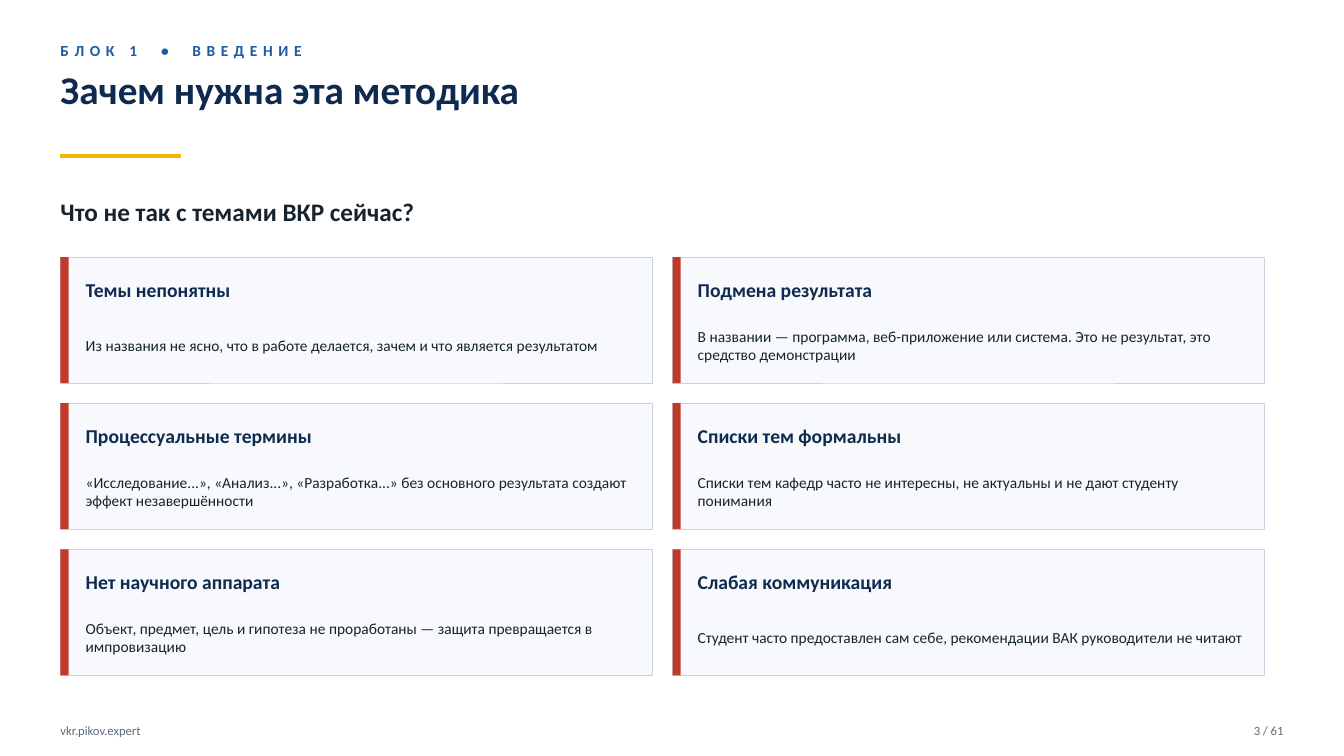
from dataclasses import dataclass

from pptx import Presentation
from pptx.dml.color import RGBColor
from pptx.enum.shapes import MSO_CONNECTOR as Connector, MSO_SHAPE as Preset
from pptx.enum.text import MSO_ANCHOR as Anchor, PP_ALIGN as Align
from pptx.oxml.ns import qn
from pptx.slide import Slide
from pptx.util import Pt
from lxml.etree import SubElement

EMU_PER_PX = 9144
FONT = "Calibri"
NAVY, INK, GRAY, BLUE = "0F2A4F", "16242F", "5C6B7A", "1E5AA7"
GOLD, RED, PANEL, BORDER = "F4B400", "C0392B", "F7F9FC", "C9D3E0"

MARGIN = 60
CARD_TOP, CARD_WIDTH, CARD_HEIGHT, GAP = 255, 587, 125, 20
COLUMNS = 2


@dataclass(frozen=True)
class Box:
    left: int
    top: int
    width: int
    height: int

    def emu(self) -> tuple[int, int, int, int]:
        return px(self.left), px(self.top), px(self.width), px(self.height)


@dataclass(frozen=True)
class Style:
    size: int
    color: str
    bold: bool = False
    anchor: Anchor = Anchor.MIDDLE
    align: Align = Align.LEFT


@dataclass(frozen=True)
class Card:
    heading: str
    body: str


EYEBROW = Style(11, BLUE, bold=True)
TITLE = Style(28, NAVY, bold=True, anchor=Anchor.TOP)
QUESTION = Style(18, INK, bold=True)
HEADING = Style(14, NAVY, bold=True)
BODY = Style(11, INK)
FOOTER = Style(9, GRAY)
PAGE_NUMBER = Style(9, GRAY, align=Align.RIGHT)

EYEBROW_RUNS = [("БЛОК 1", 400), (" ", 1050), ("•", 400), (" ", 1050), ("ВВЕДЕНИЕ", 400)]

CARDS = [
    Card("Темы непонятны",
         "Из названия не ясно, что в работе делается, зачем и что является результатом"),
    Card("Подмена результата",
         "В названии — программа, веб-приложение или система. "
         "Это не результат, это средство демонстрации"),
    Card("Процессуальные термины",
         "«Исследование...», «Анализ...», «Разработка...» "
         "без основного результата создают эффект незавершённости"),
    Card("Списки тем формальны",
         "Списки тем кафедр часто не интересны, не актуальны и не дают студенту понимания"),
    Card("Нет научного аппарата",
         "Объект, предмет, цель и гипотеза не проработаны — "
         "защита превращается в импровизацию"),
    Card("Слабая коммуникация",
         "Студент часто предоставлен сам себе, рекомендации ВАК руководители не читают"),
]


def px(value: int) -> int:
    return value * EMU_PER_PX


def rgb(color: str) -> RGBColor:
    return RGBColor.from_string(color)


def add_text(slide: Slide, box: Box, runs: list[tuple[str, int]], style: Style) -> None:
    frame = slide.shapes.add_textbox(*box.emu()).text_frame
    frame.word_wrap = True
    frame.margin_left = frame.margin_top = frame.margin_right = frame.margin_bottom = 0
    frame.vertical_anchor = style.anchor
    paragraph = frame.paragraphs[0]
    paragraph.alignment = style.align
    paragraph.font.name = FONT
    paragraph.font.size = Pt(style.size)
    paragraph.font.bold = style.bold
    paragraph.font.color.rgb = rgb(style.color)
    for text, spacing in runs:
        run = paragraph.add_run()
        run.text = text
        if spacing:
            run.font._element.set("spc", str(spacing))


def add_label(slide: Slide, box: Box, text: str, style: Style) -> None:
    add_text(slide, box, [(text, 0)], style)


def add_rectangle(slide: Slide, box: Box, fill: str, border: str | None = None) -> None:
    shape = slide.shapes.add_shape(Preset.RECTANGLE, *box.emu())
    shape.shadow.inherit = False
    shape.fill.solid()
    shape.fill.fore_color.rgb = rgb(fill)
    if border:
        shape.line.color.rgb = rgb(border)
        shape.line.width = Pt(0.5)
    else:
        shape.line.fill.background()


def add_rule(slide: Slide, left: int, top: int, width: int) -> None:
    rule = slide.shapes.add_connector(
        Connector.STRAIGHT, px(left), px(top), px(left + width), px(top))
    rule.line.color.rgb = rgb(GOLD)
    rule.line.width = Pt(3)
    SubElement(rule._element.spPr, qn("a:effectLst"))


def add_card(slide: Slide, left: int, top: int, card: Card) -> None:
    add_rectangle(slide, Box(left, top, CARD_WIDTH, CARD_HEIGHT), PANEL, BORDER)
    add_rectangle(slide, Box(left, top, 8, CARD_HEIGHT), RED)
    add_label(slide, Box(left + 25, top + 12, CARD_WIDTH - 40, 40), card.heading, HEADING)
    add_label(slide, Box(left + 25, top + 55, CARD_WIDTH - 40, 65), card.body, BODY)


def main() -> None:
    presentation = Presentation()
    presentation.slide_width = px(1333)
    presentation.slide_height = px(750)
    slide = presentation.slides.add_slide(presentation.slide_layouts[6])

    add_text(slide, Box(MARGIN, 35, 600, 30), EYEBROW_RUNS, EYEBROW)
    add_label(slide, Box(MARGIN, 65, 1213, 85), "Зачем нужна эта методика", TITLE)
    add_rule(slide, MARGIN, 155, 120)
    add_label(slide, Box(MARGIN, 185, 1213, 50), "Что не так с темами ВКР сейчас?", QUESTION)

    for index, card in enumerate(CARDS):
        row, column = divmod(index, COLUMNS)
        left = MARGIN + column * (CARD_WIDTH + GAP)
        top = CARD_TOP + row * (CARD_HEIGHT + GAP)
        add_card(slide, left, top, card)

    add_label(slide, Box(MARGIN, 710, 400, 30), "vkr.pikov.expert", FOOTER)
    add_label(slide, Box(1173, 710, 100, 30), "3 / 61", PAGE_NUMBER)
    presentation.save("out.pptx")


if __name__ == "__main__":
    main()
